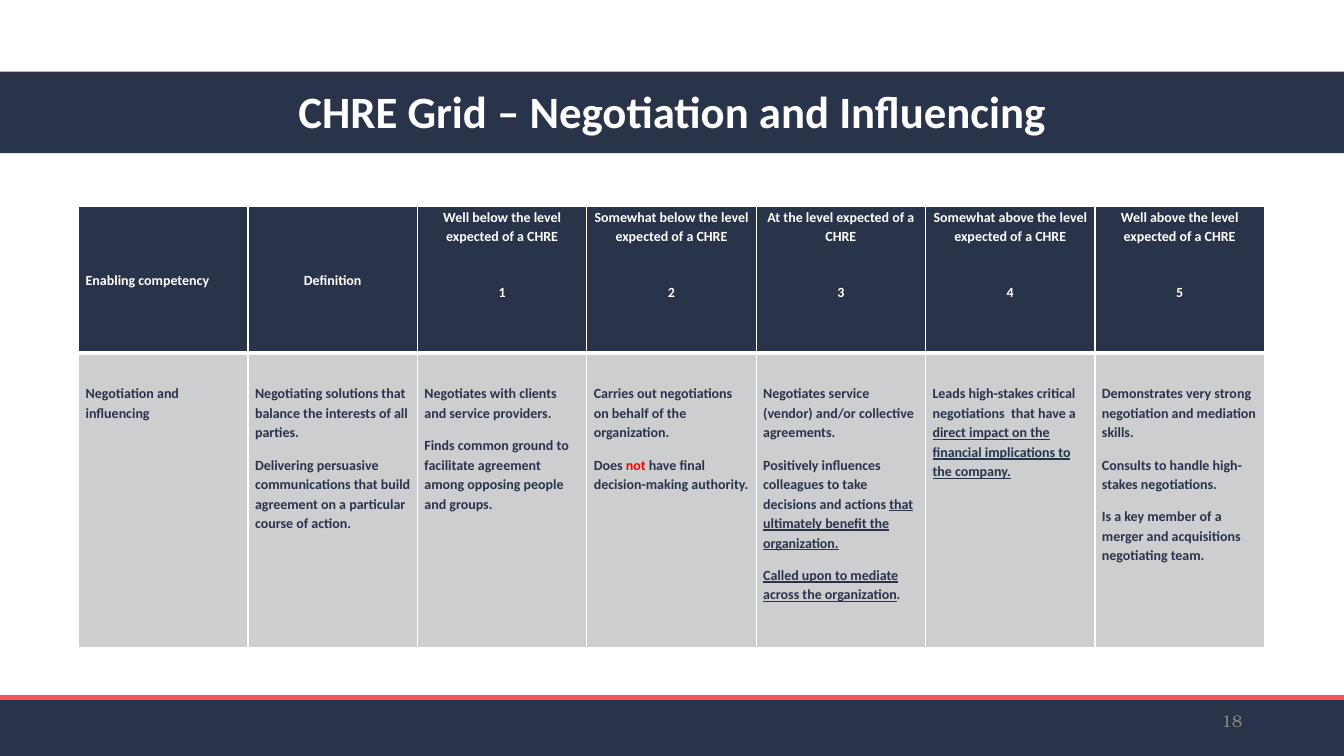
import pptx
import pptx.util
import pptx.dml.color
import pptx.enum.shapes
import pptx.enum.text
from lxml import etree
from pptx.oxml.ns import qn

Inches, Pt = pptx.util.Inches, pptx.util.Pt
RGBColor = pptx.dml.color.RGBColor
ALIGN, ANCHOR = pptx.enum.text.PP_ALIGN, pptx.enum.text.MSO_ANCHOR

NAVY = RGBColor(0x29, 0x33, 0x4A)
CORAL = RGBColor(0xF5, 0x52, 0x59)
GRAY = RGBColor(0xCD, 0xCE, 0xD0)
NUMBER_GRAY = RGBColor(0x8C, 0x8C, 0x8C)
RED = RGBColor(0xFF, 0, 0)
WHITE = RGBColor(0xFF, 0xFF, 0xFF)

TITLE = "CHRE Grid – Negotiation and Influencing"
PAGE = "18"
HEADINGS = ["Enabling competency", "Definition"]
LEVELS = ["Well below the level", "Somewhat below the level", "At the level",
          "Somewhat above the level", "Well above the level"]
# One list per cell; a paragraph is a string, or a list of (text, style) runs.
COMPETENCY = [
    ["Negotiation and influencing"],
    ["Negotiating solutions that balance the interests of all parties.",
     "Delivering persuasive communications that build agreement on a particular course of action."],
    ["Negotiates with clients and service providers.",
     "Finds common ground to facilitate agreement among opposing people and groups."],
    ["Carries out negotiations on behalf of the organization.",
     [("Does ", ""), ("not", "red"), (" have final decision-making authority.", "")]],
    ["Negotiates service (vendor) and/or collective agreements.",
     [("Positively influences colleagues to take decisions and actions ", ""),
      ("that ultimately benefit the organization.", "underline")],
     [("Called upon to mediate across the organization", "underline"), (".", "")]],
    [[("Leads high-stakes critical negotiations  that have a ", ""),
      ("direct impact on the financial implications to the company.", "underline")]],
    ["Demonstrates very strong negotiation and mediation skills.",
     "Consults to handle high-stakes negotiations.",
     "Is a key member of a merger and acquisitions negotiating team."],
]
ROW_HEIGHTS = [1.45, 2.92]
COL_WIDTH = 1.68


def add_run(p, text, size, color, bold=True, font="Calibri"):
    r = p.add_run()
    r.text = text
    r.font.name, r.font.size, r.font.bold = font, Pt(size), bold
    r.font.color.rgb = color
    return r


def add_rect(s, *box):
    sp = s.shapes.add_shape(pptx.enum.shapes.MSO_SHAPE.RECTANGLE, *map(Inches, box))
    sp.shadow.inherit = False
    sp.fill.solid()
    sp.fill.fore_color.rgb = NAVY
    sp.line.fill.background()


def add_label(s, box, align):
    """Add a vertically centred text box and return its paragraph."""
    tf = s.shapes.add_textbox(*map(Inches, box)).text_frame
    tf.word_wrap = True
    tf.vertical_anchor = ANCHOR.MIDDLE
    tf.paragraphs[0].alignment = align
    return tf.paragraphs[0]


def set_borders(cell, widths):
    """Draw white borders; widths maps L, R, T, B to points."""
    tc_pr = cell._tc.get_or_add_tcPr()
    for i, (side, width) in enumerate(widths.items()):
        ln = etree.Element(qn("a:ln" + side), w=str(Pt(width)))
        fill = etree.SubElement(ln, qn("a:solidFill"))
        etree.SubElement(fill, qn("a:srgbClr"), val=str(WHITE))
        tc_pr.insert(i, ln)


def fill_cell(cell, paragraphs, fill, color, align, gap):
    """Write the paragraphs, with gap points before each one after the first."""
    cell.fill.solid()
    cell.fill.fore_color.rgb = fill
    cell.margin_left = cell.margin_right = Inches(0.07)
    cell.margin_top = cell.margin_bottom = 0
    tf = cell.text_frame
    for i, runs in enumerate(paragraphs):
        p = tf.add_paragraph() if i else tf.paragraphs[0]
        p.alignment, p.line_spacing, p.space_after = align, 1.15, Pt(3)
        p.space_before = Pt(gap if i else 0)
        for text, style in [(runs, "")] if isinstance(runs, str) else runs:
            r = add_run(p, text, 10, RED if style == "red" else color)
            if style == "underline":
                r.font.underline = True


def add_grid(s):
    cols = len(COMPETENCY)
    table = s.shapes.add_table(2, cols, Inches(0.78), Inches(2.05),
                               Inches(COL_WIDTH * cols), Inches(sum(ROW_HEIGHTS))).table
    table.first_row = table.horz_banding = False
    for row, height in zip(table.rows, ROW_HEIGHTS):
        row.height = Inches(height)
    headers = [[h] for h in HEADINGS]
    headers += [[level + " expected of a CHRE", str(n)] for n, level in enumerate(LEVELS, 1)]
    for c, (header, body) in enumerate(zip(headers, COMPETENCY)):
        table.columns[c].width = Inches(COL_WIDTH)
        top, bottom = table.cell(0, c), table.cell(1, c)
        fill_cell(top, header, NAVY, WHITE, ALIGN.CENTER if c else ALIGN.LEFT, 23)
        if c < len(HEADINGS):
            top.vertical_anchor = ANCHOR.MIDDLE
        fill_cell(bottom, body, GRAY, NAVY, ALIGN.LEFT, 6)
        bottom.margin_top = Inches(0.3)
        set_borders(top, {"L": 1, "R": 1, "T": 1, "B": 3})
        set_borders(bottom, {"L": 1, "R": 1, "T": 3, "B": 1})


def main():
    prs = pptx.Presentation()
    prs.slide_width, prs.slide_height = Inches(13.33), Inches(7.5)
    s = prs.slides.add_slide(prs.slide_layouts[6])

    add_rect(s, 0, 6.94, 13.33, 0.56)
    rule = s.shapes.add_connector(pptx.enum.shapes.MSO_CONNECTOR.STRAIGHT,
                                  0, Inches(6.92), Inches(13.33), Inches(6.92))
    rule.line.color.rgb, rule.line.width = CORAL, Pt(3.5)
    etree.SubElement(rule._element.spPr, qn("a:effectLst"))
    add_rect(s, 0, 0.71, 13.33, 0.81)

    p = add_label(s, (0.92, 0.74, 11.5, 0.78), ALIGN.CENTER)
    p.line_spacing = 0.9
    add_run(p, TITLE, 32, WHITE)
    p = add_label(s, (9.42, 6.95, 3, 0.4), ALIGN.RIGHT)
    add_run(p, PAGE, 12, NUMBER_GRAY, False, "TeX Gyre Bonum")

    add_grid(s)
    prs.save("out.pptx")


if __name__ == "__main__":
    main()
